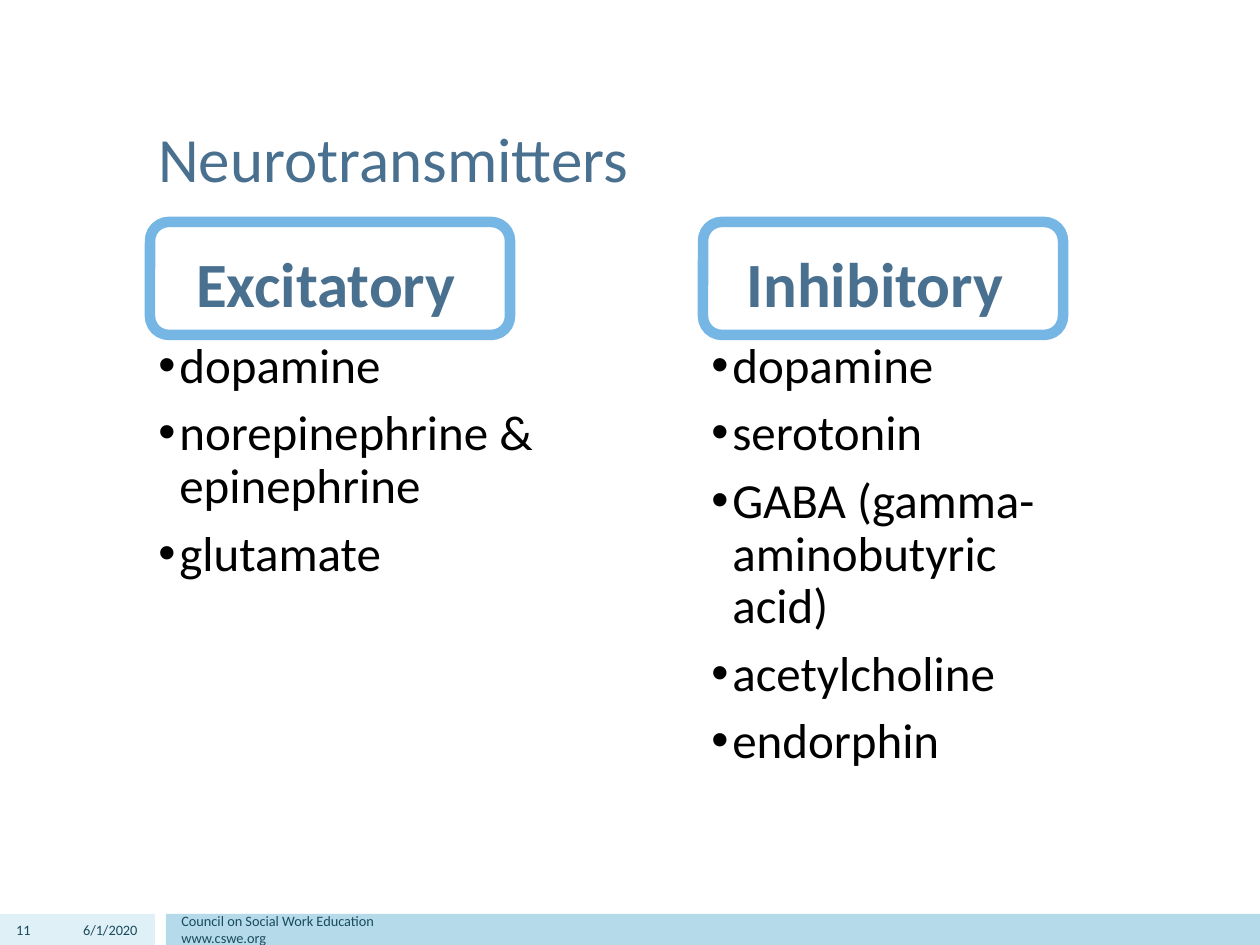
from dataclasses import dataclass

from lxml import etree
from pptx import Presentation
from pptx import util as u
from pptx.dml.color import RGBColor
from pptx.enum import shapes, text
from pptx.oxml import ns


@dataclass(frozen=True)
class Theme:
    font: str = "Calibri"
    head: str = "4A7090"
    body: str = "000000"
    foot: str = "1A4A5D"
    frame: str = "75B6E5"
    pale: str = "DFF0F6"
    band: str = "B5DBEA"
    big: float = 36
    mid: float = 28
    small: float = 8.2
    line: float = 6


THEME = Theme()
LEFT, RIGHT = text.PP_ALIGN.LEFT, text.PP_ALIGN.RIGHT
CENTER = text.PP_ALIGN.CENTER
TOP, MIDDLE = text.MSO_ANCHOR.TOP, text.MSO_ANCHOR.MIDDLE
BOTTOM = text.MSO_ANCHOR.BOTTOM


def px(n):
    return u.Emu(round(n * 914400 / 126))


def rgb(code):
    return RGBColor.from_string(code)


def write(slide, box, lines, size, color, anchor=TOP, align=LEFT, bold=False):
    """Add a text box with one paragraph per line and return its paragraphs."""
    frame = slide.shapes.add_textbox(*map(px, box)).text_frame
    frame.word_wrap = True
    frame.vertical_anchor = anchor
    for i, line in enumerate(lines):
        para = frame.add_paragraph() if i else frame.paragraphs[0]
        para.text = line
        para.alignment = align
        for run in para.runs:
            font = run.font
            font.name, font.size, font.bold = THEME.font, u.Pt(size), bold
            font.color.rgb = rgb(color)
    return frame.paragraphs


def bar(slide, box, color):
    rect = slide.shapes.add_shape(shapes.MSO_SHAPE.RECTANGLE, *map(px, box))
    rect.shadow.inherit = False
    rect.fill.solid()
    rect.fill.fore_color.rgb = rgb(color)
    rect.line.fill.background()


def bullet(para):
    props = para._p.get_or_add_pPr()
    props.set("marL", str(px(21)))
    props.set("indent", str(-px(21)))
    font = etree.SubElement(props, ns.qn("a:buFont"))
    font.set("typeface", "Arial")
    mark = etree.SubElement(props, ns.qn("a:buChar"))
    mark.set("char", "•")


def column(slide, box, head, shift, items):
    """Place a framed heading, moved sideways by shift, over a bullet list."""
    x, y, w, h = box
    label = write(slide, (x + shift, y, 360, 113), [head], THEME.big,
                  THEME.head, BOTTOM, CENTER, True)
    label[0].line_spacing = 0.9

    paras = write(slide, (x, y + 121, w, h - 121), items,
                  THEME.mid, THEME.body)
    for i, para in enumerate(paras):
        bullet(para)
        para.line_spacing = 0.9
        if i:
            para.space_before = u.Pt(8.2)

    frame = slide.shapes.add_shape(shapes.MSO_SHAPE.ROUNDED_RECTANGLE,
                                   *map(px, (x + 4, y + 8, 360, 113)))
    frame.shadow.inherit = False
    frame.fill.background()
    frame.line.color.rgb = rgb(THEME.frame)
    frame.line.width = u.Pt(THEME.line)


def footer(slide, box):
    x, y, w, h = box
    bar(slide, (x, y, 155, h), THEME.pale)
    bar(slide, (x + 166, y, w - 166, h), THEME.band)
    notes = [
        (0, 43, "11", RIGHT),
        (47, 103, "6/1/2020", RIGHT),
        (169, 945, "Council on Social Work Education\vwww.cswe.org", LEFT),
    ]
    for dx, wide, words, align in notes:
        write(slide, (x + dx, y, wide, h), [words], THEME.small,
              THEME.foot, MIDDLE, align)


def main():
    deck = Presentation()
    deck.slide_width, deck.slide_height = px(1260), px(945)
    slide = deck.slides.add_slide(deck.slide_layouts[6])
    footer(slide, (0, 914, 1260, 31))
    write(slide, (146, 38, 969, 163), ["Neurotransmitters"], THEME.big,
          THEME.head, BOTTOM)
    column(slide, (146, 214, 450, 646), "Excitatory", 0,
           ["dopamine", "norepinephrine & epinephrine", "glutamate"])
    column(slide, (699, 214, 416, 646), "Inhibitory", -4,
           ["dopamine", "serotonin", "GABA (gamma-aminobutyric acid)",
            "acetylcholine", "endorphin"])
    deck.save("out.pptx")


if __name__ == "__main__":
    main()
